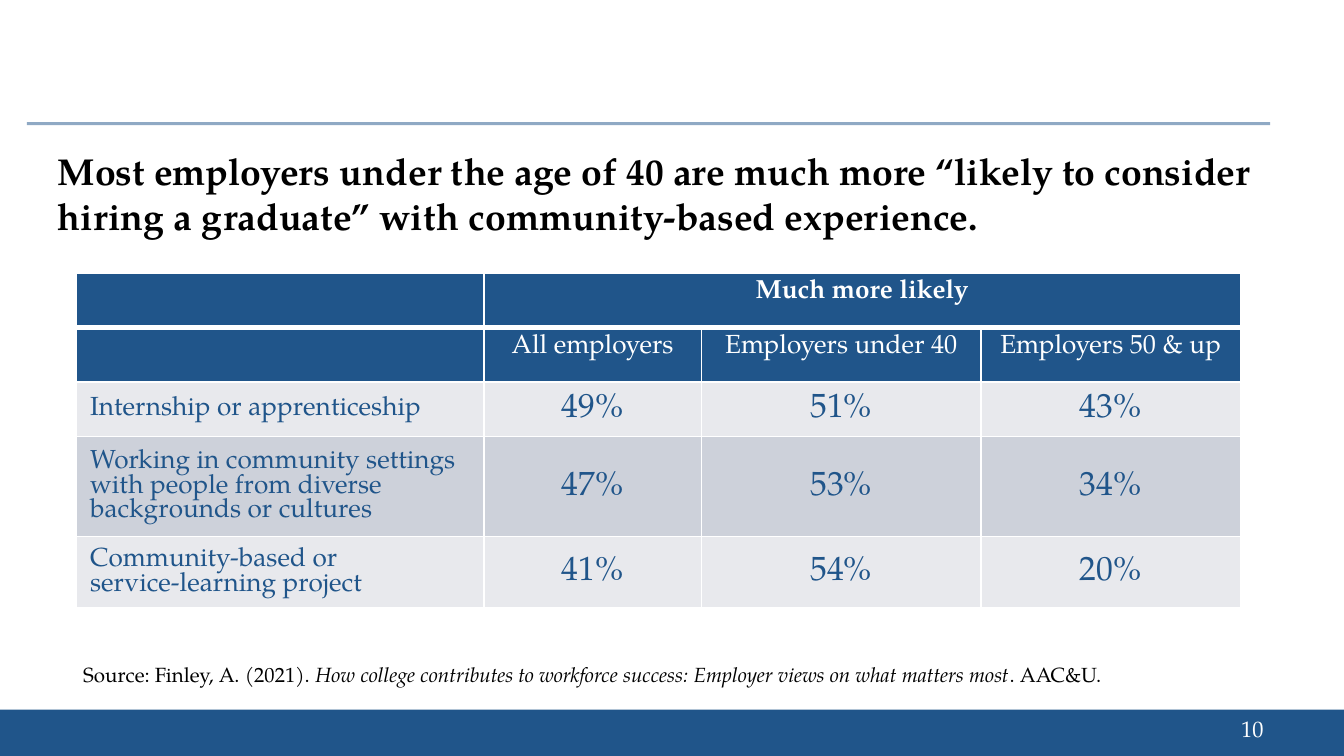
from dataclasses import dataclass
from lxml.etree import SubElement
from pptx import Presentation
from pptx.dml.color import RGBColor
from pptx.enum.shapes import MSO_CONNECTOR as Connector, MSO_SHAPE as Shape
from pptx.enum.text import MSO_ANCHOR as Anchor, MSO_AUTO_SIZE as AutoSize, PP_ALIGN as Align
from pptx.oxml.ns import qn
from pptx.util import Inches, Pt


@dataclass(frozen=True)
class Theme:
    font: str = "TeX Gyre Pagella"
    blue: str = "20558A"
    white: str = "FFFFFF"
    black: str = "000000"
    light_band: str = "E8E9ED"
    dark_band: str = "CDD1DA"
    title_size: int = 20
    figure_size: int = 18
    label_size: int = 14
    number_size: int = 12
    source_size: int = 11
    table_spacing: float = 0.92


THEME = Theme()
TITLE = (
    "Most employers under the age of 40 are much more “likely to consider "
    "hiring a graduate” with community-based experience."
)
SOURCE = [
    ("Source: Finley, A. (2021). ", False),
    ("How college contributes to workforce success: Employer views on what matters most", True),
    (". AAC&U.", False),
]
ROWS = [
    ["", "Much more likely", "", ""],
    ["", "All employers", "Employers under 40", "Employers 50 & up"],
    ["Internship or apprenticeship", "49%", "51%", "43%"],
    [
        "Working in community settings with people from diverse backgrounds or cultures",
        "47%", "53%", "34%",
    ],
    ["Community-based or\nservice-learning project", "41%", "54%", "20%"],
]
HEADER_ROWS = 2
COLUMN_WIDTHS = [3.03, 1.62, 2.08, 1.93]
ROW_HEIGHT = Pt(29.2)


def rgb(color):
    return RGBColor.from_string(color)


def box(left, top, width, height):
    return [Inches(length) for length in (left, top, width, height)]


def format_font(font, size, color, bold=False, italic=False):
    font.name = THEME.font
    font.size = Pt(size)
    font.bold = bold
    font.italic = italic
    font.color.rgb = rgb(color)


def add_title(slide, text, place):
    title = slide.shapes.title
    title.left, title.top, title.width, title.height = place
    frame = title.text_frame
    frame.text = text
    frame.word_wrap = True
    frame.auto_size = AutoSize.NONE
    frame.vertical_anchor = Anchor.TOP
    paragraph = frame.paragraphs[0]
    paragraph.alignment = Align.LEFT
    format_font(paragraph.runs[0].font, THEME.title_size, THEME.black, bold=True)


def add_text(slide, runs, place, size, color, align=Align.LEFT, anchor=Anchor.TOP):
    frame = slide.shapes.add_textbox(*place).text_frame
    frame.word_wrap = True
    frame.vertical_anchor = anchor
    paragraph = frame.paragraphs[0]
    paragraph.alignment = align
    for text, italic in runs:
        run = paragraph.add_run()
        run.text = text
        format_font(run.font, size, color, italic=italic)


def add_footer_band(slide, place):
    band = slide.shapes.add_shape(Shape.RECTANGLE, *place)
    band.shadow.inherit = False
    band.fill.solid()
    band.fill.fore_color.rgb = rgb(THEME.blue)
    band.line.fill.background()


def add_rule(slide, left, right, top):
    rule = slide.shapes.add_connector(Connector.STRAIGHT, *box(left, top, right, top))
    rule.line.width = Pt(1.5)
    rule.line.color.rgb = rgb(THEME.blue)
    properties = rule._element.spPr
    color = properties.find(".//" + qn("a:srgbClr"))
    SubElement(color, qn("a:alpha"), val="50000")
    SubElement(properties, qn("a:effectLst"))


def add_borders(cell, top, bottom):
    properties = cell._tc.get_or_add_tcPr()
    for side, width in (("L", 1), ("R", 1), ("T", top), ("B", bottom)):
        line = SubElement(properties, qn("a:ln" + side), w=str(Pt(width)))
        fill = SubElement(line, qn("a:solidFill"))
        SubElement(fill, qn("a:srgbClr"), val=THEME.white)


def format_cell(cell, text, row, column):
    is_header = row < HEADER_ROWS
    is_label = column == 0
    add_borders(cell, top=3 if row == 1 else 1, bottom=3 if row == 0 else 1)
    band = THEME.dark_band if row % 2 else THEME.light_band
    cell.fill.solid()
    cell.fill.fore_color.rgb = rgb(THEME.blue if is_header else band)
    cell.vertical_anchor = Anchor.TOP if is_header else Anchor.MIDDLE
    size = THEME.label_size if is_header or is_label else THEME.figure_size
    color = THEME.white if is_header else THEME.blue
    cell.text_frame.text = text
    for paragraph in cell.text_frame.paragraphs:
        paragraph.alignment = Align.LEFT if is_label else Align.CENTER
        paragraph.line_spacing = THEME.table_spacing
        format_font(paragraph.font, size, color, bold=row == 0)
        for run in paragraph.runs:
            format_font(run.font, size, color, bold=row == 0)


def add_employer_table(slide, place):
    frame = slide.shapes.add_table(len(ROWS), len(COLUMN_WIDTHS), *place)
    table = frame.table
    for column, width in zip(table.columns, COLUMN_WIDTHS):
        column.width = Inches(width)
    for row in table.rows:
        row.height = ROW_HEIGHT
    for row, texts in enumerate(ROWS):
        for column, text in enumerate(texts):
            format_cell(table.cell(row, column), text, row, column)
    table.cell(0, 1).merge(table.cell(0, 3))
    frame.height = place[-1]


def main():
    presentation = Presentation()
    presentation.slide_width = Inches(10)
    presentation.slide_height = Inches(10 * 9 / 16)
    slide = presentation.slides.add_slide(presentation.slide_layouts[5])
    add_footer_band(slide, box(-0.01, 5.28, 10.01, 0.35))
    add_rule(slide, 0.2, 9.45, 0.92)
    add_text(slide, [("10", False)], box(7.17, 5.27, 2.33, 0.3),
             THEME.number_size, THEME.white, Align.RIGHT, Anchor.MIDDLE)
    add_employer_table(slide, box(0.57, 2.03, 8.66, 2.58))
    add_title(slide, TITLE, box(0.33, 1.05, 9.17, 0.77))
    add_text(slide, SOURCE, box(0.52, 4.88, 8.52, 0.29), THEME.source_size, THEME.black)
    presentation.save("out.pptx")


if __name__ == "__main__":
    main()
